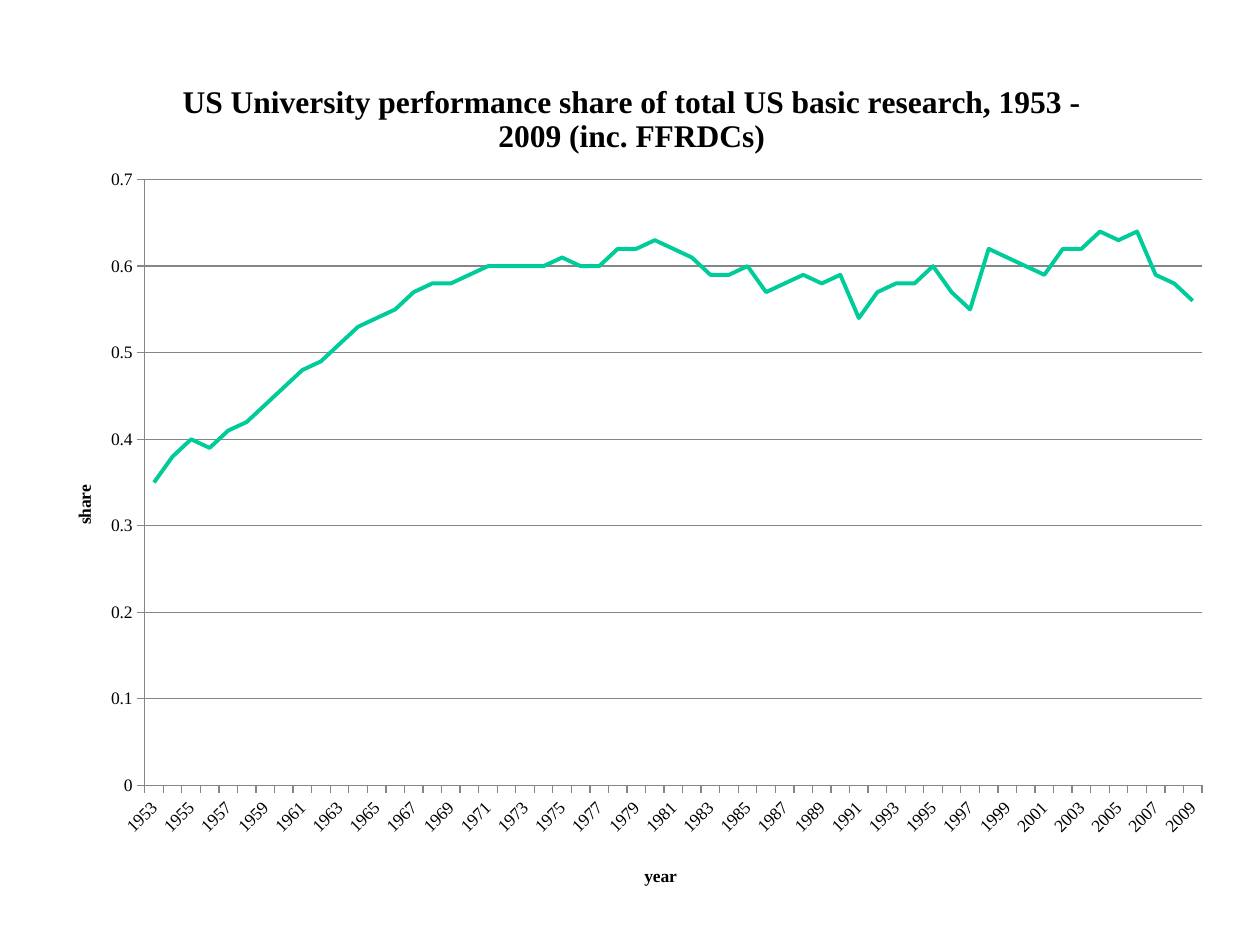
"""Build a slide with a line chart of the university share of US basic research."""
from lxml.etree import SubElement
from pptx import Presentation
from pptx.chart.data import CategoryChartData
from pptx.dml.color import RGBColor
from pptx.enum.chart import XL_CHART_TYPE, XL_TICK_MARK
from pptx.oxml.ns import qn
from pptx.util import Inches, Pt

COLORS = {"text": "000000", "grid": "868686", "share": "00CC99"}
SHARES = [
    0.35, 0.38, 0.4, 0.39, 0.41, 0.42, 0.44, 0.46, 0.48, 0.49, 0.51, 0.53,
    0.54, 0.55, 0.57, 0.58, 0.58, 0.59, 0.6, 0.6, 0.6, 0.6, 0.61, 0.6,
    0.6, 0.62, 0.62, 0.63, 0.62, 0.61, 0.59, 0.59, 0.6, 0.57, 0.58, 0.59,
    0.58, 0.59, 0.54, 0.57, 0.58, 0.58, 0.6, 0.57, 0.55, 0.62, 0.61, 0.6,
    0.59, 0.62, 0.62, 0.64, 0.63, 0.64, 0.59, 0.58, 0.56,
]


def set_layout(el, index, **values):
    for old in el.findall(qn("c:layout")):
        el.remove(old)
    layout = SubElement(el, qn("c:layout"))
    el.insert(index, layout)
    manual = SubElement(layout, qn("c:manualLayout"))
    for tag, val in values.items():
        SubElement(manual, qn(f"c:{tag}")).set("val", str(val))


def set_title(title, text, size, x, y):
    tf = title.text_frame
    tf.text = text
    font = tf.paragraphs[0].runs[0].font
    for name, value in {"name": "Times New Roman", "size": Pt(size), "bold": True}.items():
        setattr(font, name, value)
    font.color.rgb = RGBColor.from_string(COLORS["text"])
    set_layout(title.element, 1, xMode="edge", yMode="edge", x=x, y=y)


prs = Presentation()
prs.slide_width, prs.slide_height = Inches(10), Inches(7.5)
s = prs.slides.add_slide(prs.slide_layouts[6])

data = CategoryChartData(number_format="General")
data.categories = [str(1953 + i) for i in range(len(SHARES))]
data.add_series("Series 1", SHARES)
chart = s.shapes.add_chart(
    XL_CHART_TYPE.LINE, Inches(0.27), Inches(0.33), Inches(9.45), Inches(6.85), data
).chart
chart.has_legend = False
chart.font.name = "Times New Roman"
chart.font.size = Pt(10)
chart.font.color.rgb = RGBColor.from_string(COLORS["text"])

cat, val = chart.category_axis, chart.value_axis
set_title(chart.chart_title, "US University performance share of total US basic research, 1953 - 2009 (inc. FFRDCs)", 18, 0.12, 0.04)
set_title(cat.axis_title, "year", 10, 0.51, 0.95)
set_title(val.axis_title, "share", 10, 0.03, 0.51)
chart.chart_title.include_in_layout = False

for name, value in {"minimum_scale": 0, "maximum_scale": 0.7, "major_unit": 0.1, "has_major_gridlines": True}.items():
    setattr(val, name, value)
for axis in (cat, val):
    axis.major_tick_mark = XL_TICK_MARK.OUTSIDE
    axis.minor_tick_mark = XL_TICK_MARK.NONE
    axis.tick_labels.font.size = Pt(10)
for line in (cat.format.line, val.format.line, val.major_gridlines.format.line):
    line.width = Pt(0.75)
    line.color.rgb = RGBColor.from_string(COLORS["grid"])
body = chart.element.find(f".//{qn('c:catAx')}/{qn('c:txPr')}/{qn('a:bodyPr')}")
body.set("rot", "-2700000")
body.set("vert", "horz")

plot_area = chart.element.find(f".//{qn('c:plotArea')}")
set_layout(plot_area, 0, layoutTarget="inner", xMode="edge", yMode="edge", x=0.093, y=0.16, w=0.888, h=0.702)

chart.plots[0].vary_by_categories = False
series = chart.plots[0].series[0]
series.smooth = False
series.format.line.width = Pt(2.25)
series.format.line.color.rgb = RGBColor.from_string(COLORS["share"])

prs.save("out.pptx")
